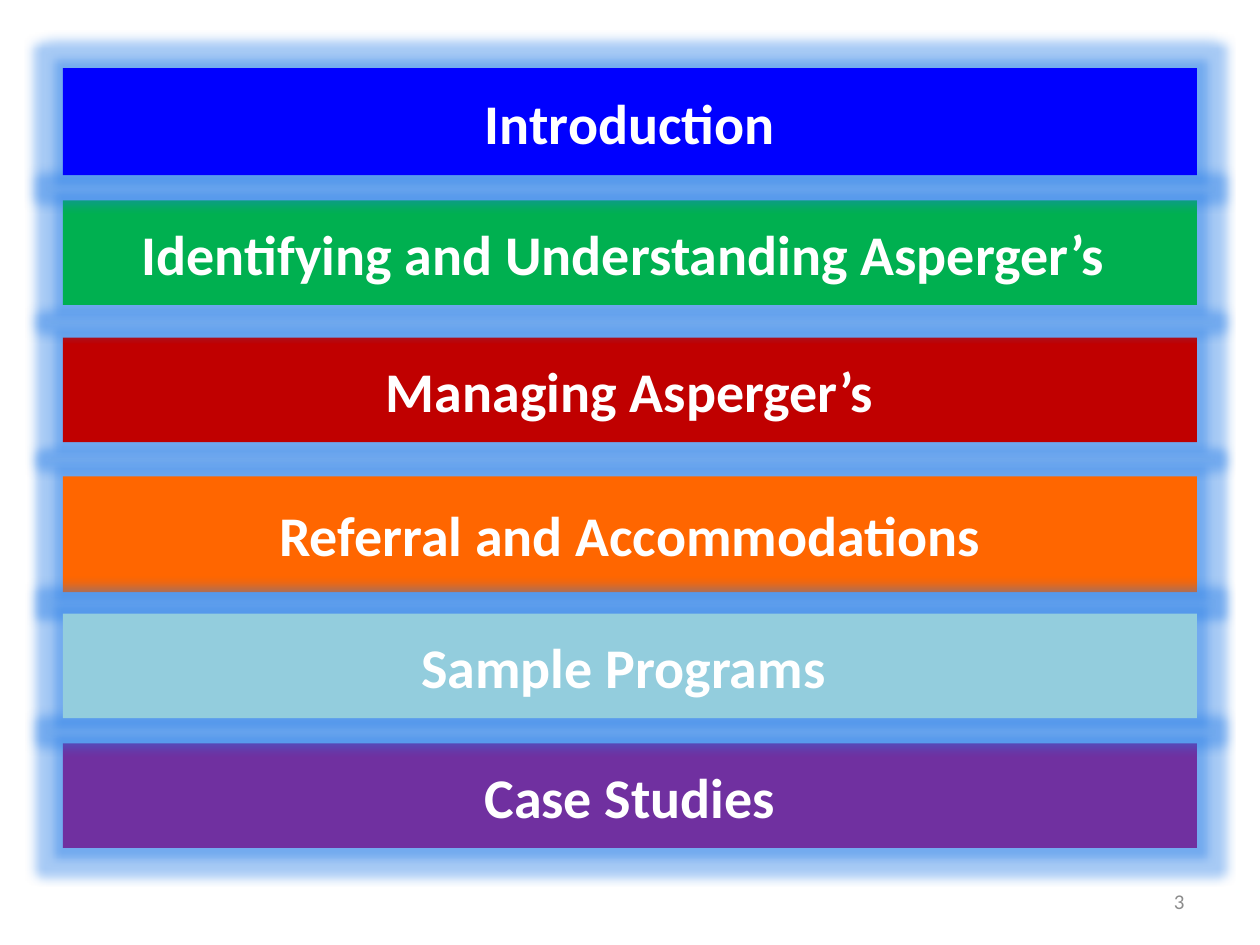
import pptx
import pptx.dml.color
import pptx.enum.shapes
import pptx.enum.text
import pptx.oxml
import pptx.oxml.ns
import pptx.util
from pptx.util import Inches

COLORS = {
    "blue": "0000FF",
    "green": "00B050",
    "red": "C00000",
    "orange": "FF6600",
    "aqua": "93CDDD",
    "purple": "7030A0",
    "white": "FFFFFF",
    "gray": "8C8C8C",
    "glow": "257CE7",
}
FONT = "Calibri"
BAR_LEFT, BAR_WIDTH = 0.5, 9

# Topic, colour, top and height, from back to front so the glows overlap in order
TOPICS = [
    ("Managing Asperger’s", "red", 2.68, 0.83),
    ("Identifying and Understanding Asperger’s ", "green", 1.59, 0.83),
    ("Case Studies", "purple", 5.9, 0.83),
    ("Referral and Accommodations", "orange", 3.78, 0.92),
    ("Introduction", "blue", 0.54, 0.85),
    ("Sample Programs ", "aqua", 4.87, 0.83),
]


def rgb(color):
    return pptx.dml.color.RGBColor.from_string(COLORS[color])


def write_text(shape, text, size, color, align, bold=False):
    frame = shape.text_frame
    frame.word_wrap = True
    frame.vertical_anchor = pptx.enum.text.MSO_ANCHOR.MIDDLE
    paragraph = frame.paragraphs[0]
    paragraph.alignment = align
    run = paragraph.add_run()
    run.text = text
    run.font.name = FONT
    run.font.size = pptx.util.Pt(size)
    run.font.bold = bold
    run.font.color.rgb = rgb(color)


def add_glow(shape, radius, opacity):
    """Put a glow in the shape's effect list; opacity is in percent."""
    shape.shadow.inherit = False
    effects = shape._element.spPr.find(pptx.oxml.ns.qn("a:effectLst"))
    effects.append(pptx.oxml.parse_xml(
        f'<a:glow {pptx.oxml.ns.nsdecls("a")} rad="{pptx.util.Pt(radius)}">'
        f'<a:srgbClr val="{COLORS["glow"]}"><a:alpha val="{opacity * 1000}"/>'
        '</a:srgbClr></a:glow>'))


def add_topic_bar(slide, topic, color, top, height):
    bar = slide.shapes.add_shape(
        pptx.enum.shapes.MSO_SHAPE.RECTANGLE,
        Inches(BAR_LEFT), Inches(top), Inches(BAR_WIDTH), Inches(height))
    bar.fill.solid()
    bar.fill.fore_color.rgb = rgb(color)
    bar.line.fill.background()
    add_glow(bar, radius=11, opacity=40)
    write_text(bar, topic, size=32, color="white", bold=True,
               align=pptx.enum.text.PP_ALIGN.CENTER)


def add_page_number(slide, number):
    box = slide.shapes.add_textbox(
        Inches(7.17), Inches(6.95), Inches(2.33), Inches(0.4))
    write_text(box, number, size=12, color="gray",
               align=pptx.enum.text.PP_ALIGN.RIGHT)


def main():
    deck = pptx.Presentation()
    deck.slide_width, deck.slide_height = Inches(10), Inches(7.5)
    slide = deck.slides.add_slide(deck.slide_layouts[6])
    for topic in TOPICS:
        add_topic_bar(slide, *topic)
    add_page_number(slide, "3")
    deck.save("out.pptx")


if __name__ == "__main__":
    main()
